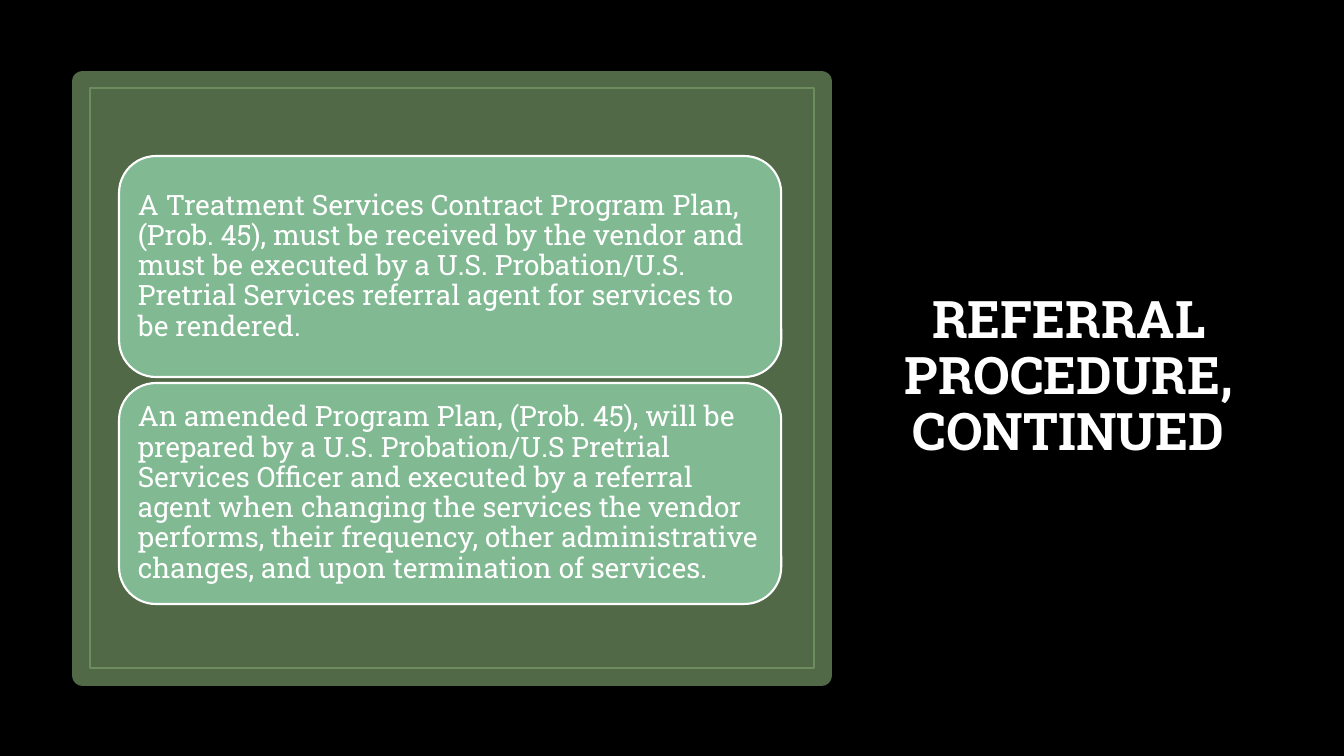
from dataclasses import dataclass

from pptx import Presentation, util as u
from pptx.dml.color import RGBColor
from pptx.enum import shapes, text


@dataclass(frozen=True)
class Theme:
    font: str = "Roboto Slab"
    background: str = "000000"
    panel: str = "526948"
    frame: str = "6D8C60"
    card: str = "81B992"
    light: str = "FFFFFF"
    title_size: int = 37
    body_size: int = 20
    line_spacing: float = 0.9


class SlideBuilder:
    EMU_PER_PX = 914400 / 100.8

    def __init__(self, slide, theme):
        self.slide = slide
        self.theme = theme
        self.fill(slide.background.fill, theme.background)

    def px(self, *lengths):
        return [u.Emu(round(length * self.EMU_PER_PX)) for length in lengths]

    def fill(self, fill, color):
        if color is None:
            fill.background()
        else:
            fill.solid()
            fill.fore_color.rgb = RGBColor.from_string(color)

    def box(self, bounds, fill, line, line_width, kind=shapes.MSO_SHAPE.RECTANGLE):
        shape = self.slide.shapes.add_shape(kind, *self.px(*bounds))
        shape.shadow.inherit = False
        self.fill(shape.fill, fill)
        self.fill(shape.line.fill, line)
        shape.line.width = u.Pt(line_width)
        return shape

    def set_text(self, shape, words, size, align, bold=False, inset=8):
        frame = shape.text_frame
        frame.word_wrap = True
        frame.vertical_anchor = text.MSO_ANCHOR.MIDDLE
        frame.margin_left, frame.margin_top, frame.margin_right, frame.margin_bottom = self.px(*[inset] * 4)
        paragraph = frame.paragraphs[0]
        paragraph.text = words
        paragraph.alignment = align
        paragraph.line_spacing = self.theme.line_spacing
        paragraph.font.name = self.theme.font
        paragraph.font.size = u.Pt(size)
        paragraph.font.bold = bold
        paragraph.font.color.rgb = RGBColor.from_string(self.theme.light)

    def card(self, bounds, words):
        shape = self.box(bounds, self.theme.card, self.theme.light, 1.5,
                         shapes.MSO_SHAPE.ROUNDED_RECTANGLE)
        self.set_text(shape, words, self.theme.body_size, text.PP_ALIGN.LEFT)

    def title(self, bounds, words):
        shape = self.slide.shapes.add_textbox(*self.px(*bounds))
        self.set_text(shape, words, self.theme.title_size, text.PP_ALIGN.CENTER, bold=True)


CARDS = [
    "A Treatment Services Contract Program Plan, (Prob. 45), must be received by the "
    "vendor and must be executed by a U.S. Probation/U.S. Pretrial Services referral "
    "agent for services to be rendered.",
    "An amended Program Plan, (Prob. 45), will be prepared by a U.S. Probation/U.S "
    "Pretrial Services Officer and executed by a referral agent when changing the "
    "services the vendor performs, their frequency, other administrative changes, "
    "and upon termination of services.",
]
CARD_LEFT, CARD_TOP, CARD_WIDTH, CARD_HEIGHT, CARD_GAP = 119, 156, 662, 221, 6


def main():
    presentation = Presentation()
    theme = Theme()
    presentation.slide_width = u.Inches(13.33)
    presentation.slide_height = u.Inches(7.5)
    builder = SlideBuilder(presentation.slides.add_slide(presentation.slide_layouts[6]), theme)

    # Title on the right
    builder.title((868, 70, 401, 616), "REFERRAL PROCEDURE, CONTINUED")

    # Green panel with its thin inner frame
    builder.box((83, 81, 738, 595), theme.panel, theme.panel, 15)
    builder.box((90, 88, 724, 580), None, theme.frame, 1)

    # Stacked cards
    for row, words in enumerate(CARDS):
        top = CARD_TOP + row * (CARD_HEIGHT + CARD_GAP)
        builder.card((CARD_LEFT, top, CARD_WIDTH, CARD_HEIGHT), words)

    presentation.save("out.pptx")


if __name__ == "__main__":
    main()
